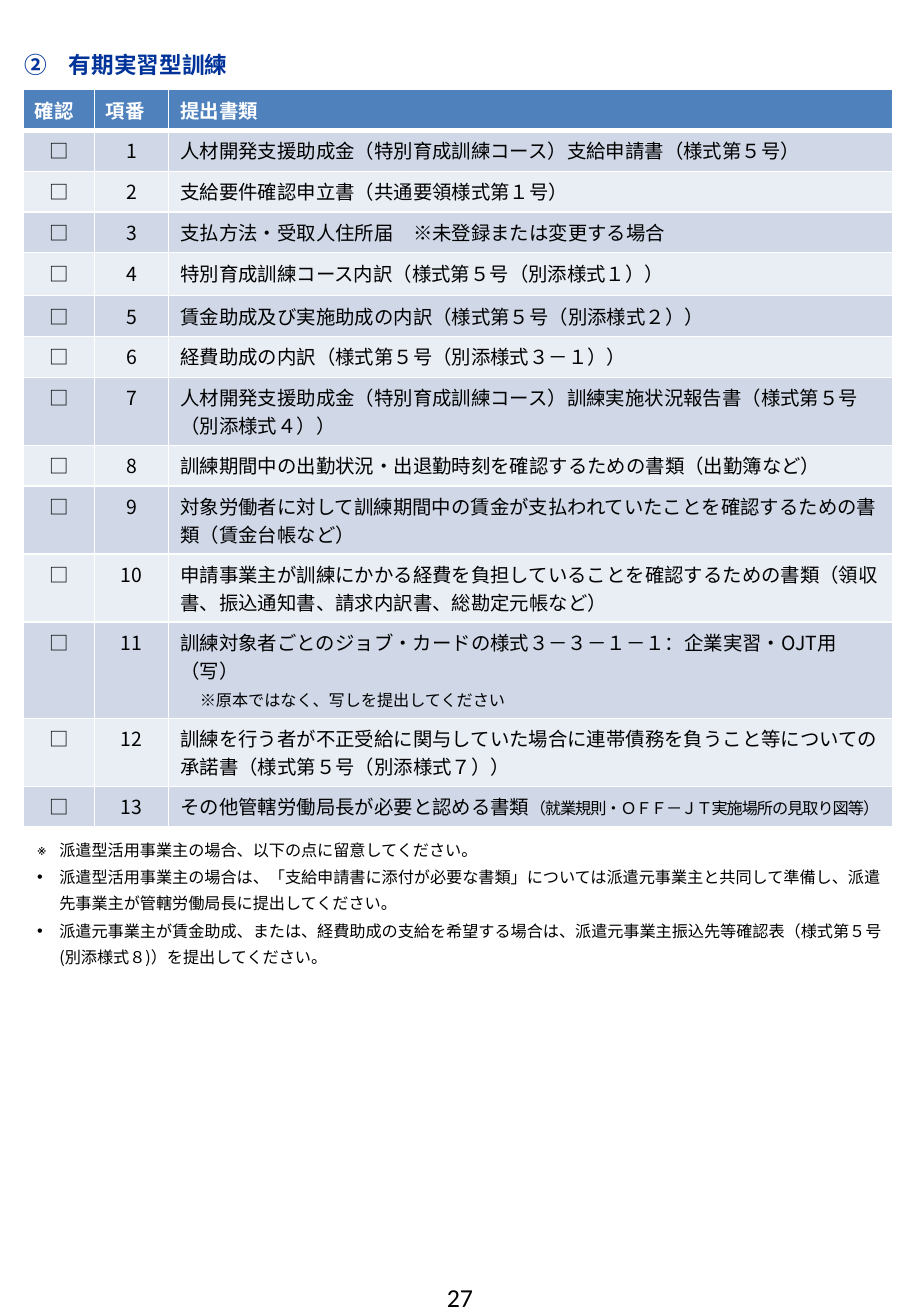
from lxml import etree
from pptx import Presentation
from pptx.dml.color import RGBColor
from pptx.enum.text import MSO_ANCHOR as Anchor, MSO_AUTO_SIZE as AutoSize, PP_ALIGN as Align
from pptx.oxml.ns import qn
from pptx.util import Inches, Pt

COLORS = {"heading": "003399", "header": "4F81BD", "odd": "D0D8E8",
          "even": "E9EDF4", "text": "000000", "white": "FFFFFF"}
JAPANESE = "Noto Sans CJK JP"


def write(para, text, size=12, color="text", bold=False, font=JAPANESE,
          align=Align.LEFT, spacing=None):
    para.alignment = align
    span = para.add_run()
    span.text = text
    span.font.size = Pt(size)
    span.font.bold = bold
    span.font.color.rgb = RGBColor.from_string(COLORS[color])
    span.font.name = font
    properties = span.font._element
    etree.SubElement(properties, qn("a:ea"), typeface=font)
    if spacing is not None:
        properties.set("spc", str(round(spacing * 100)))


def set_bullet(para, tag, indent, hanging, **attributes):
    properties = para._p.get_or_add_pPr()
    properties.set("marL", str(Inches(indent)))
    properties.set("indent", str(-Inches(hanging)))
    etree.SubElement(properties, qn(tag), **attributes)


deck = Presentation()
deck.slide_width, deck.slide_height = Inches(63 / 8), Inches(11.3)
page = deck.slides.add_slide(deck.slide_layouts[1])
title, notes = page.placeholders
number = page.shapes.add_textbox(0, 0, 0, 0)

frames = [
    (title, (0.1, 0.41, 7.61, 0.35), Anchor.TOP),
    (notes, (0.17, 7.11, 7.53, 1.22), Anchor.TOP),
    (number, (3.58, 10.89, 0.74, 0.49), Anchor.MIDDLE),
]
for box, place, anchor in frames:
    box.left, box.top, box.width, box.height = map(Inches, place)
    frame = box.text_frame
    frame.word_wrap = True
    frame.auto_size = AutoSize.NONE
    frame.vertical_anchor = anchor
    frame.margin_left = frame.margin_right = Inches(0.11)
    frame.margin_top = frame.margin_bottom = Inches(0.05)

heading = title.text_frame.paragraphs[0]
write(heading, "有期実習型訓練", size=14, color="heading", bold=True)
heading.line_spacing = Pt(15)
set_bullet(heading, "a:buAutoNum", 0.38, 0.38, type="circleNumDbPlain", startAt="2")

documents = [
    ("人材開発支援助成金（特別育成訓練コース）支給申請書（様式第５号）", 0.35),
    ("支給要件確認申立書（共通要領様式第１号）", 0.35),
    ("支払方法・受取人住所届　※未登録または変更する場合", 0.35),
    ("特別育成訓練コース内訳（様式第５号（別添様式１））", 0.37),
    ("賃金助成及び実施助成の内訳（様式第５号（別添様式２））", 0.35),
    ("経費助成の内訳（様式第５号（別添様式３－１））", 0.35),
    ("人材開発支援助成金（特別育成訓練コース）訓練実施状況報告書（様式第５号（別添様式４））", 0.58),
    ("訓練期間中の出勤状況・出退勤時刻を確認するための書類（出勤簿など）", 0.35),
    ("対象労働者に対して訓練期間中の賃金が支払われていたことを確認するための書類（賃金台帳など）", 0.58),
    ("申請事業主が訓練にかかる経費を負担していることを確認するための書類（領収書、振込通知書、請求内訳書、総勘定元帳など）", 0.58),
    ("訓練対象者ごとのジョブ・カードの様式３－３－１－１：企業実習・OJT用（写）　", 0.82),
    ("訓練を行う者が不正受給に関与していた場合に連帯債務を負うこと等についての承諾書（様式第５号（別添様式７））", 0.58),
    ("その他管轄労働局長が必要と認める書類", 0.35),
]
heights = [0.35] + [height for _, height in documents]
widths = [0.61, 0.64, 6.22]
table = page.shapes.add_table(
    len(heights), len(widths), Inches(0.2), Inches(0.77),
    Inches(sum(widths)), Inches(sum(heights))).table
for column, width in zip(table.columns, widths):
    column.width = Inches(width)

rows = [("確認", "項番", "提出書類")]
rows += [("□", str(index), name) for index, (name, _) in enumerate(documents, 1)]
for index, texts in enumerate(rows):
    table.rows[index].height = Inches(heights[index])
    is_header = index == 0
    fill = "header" if is_header else "odd" if index % 2 else "even"
    for column, text in enumerate(texts):
        cell = table.cell(index, column)
        properties = cell._tc.get_or_add_tcPr()
        for side in ("L", "R", "T", "B"):
            is_thick = (is_header and side == "B") or (index == 1 and side == "T")
            line = etree.SubElement(properties, qn(f"a:ln{side}"), w=str(Pt(3 if is_thick else 1)))
            paint = etree.SubElement(line, qn("a:solidFill"))
            etree.SubElement(paint, qn("a:srgbClr"), val=COLORS["white"])
        cell.fill.solid()
        cell.fill.fore_color.rgb = RGBColor.from_string(COLORS[fill])
        write(cell.text_frame.paragraphs[0], text, bold=is_header,
              color="white" if is_header else "text",
              align=Align.LEFT if is_header or column == 2 else Align.CENTER)

copy_note = table.cell(11, 2).text_frame.add_paragraph()
write(copy_note, "　")
write(copy_note, "※原本ではなく、写しを提出してください", size=10)
write(table.cell(13, 2).text_frame.paragraphs[0],
      "（就業規則・ＯＦＦ－ＪＴ実施場所の見取り図等）", size=10, spacing=-0.6)

remarks = [
    ("※", "派遣型活用事業主の場合、以下の点に留意してください。"),
    ("•", "派遣型活用事業主の場合は、「支給申請書に添付が必要な書類」については派遣元事業主と共同して準備し、派遣先事業主が管轄労働局長に提出してください。"),
    ("•", "派遣元事業主が賃金助成、または、経費助成の支給を希望する場合は、派遣元事業主振込先等確認表（様式第５号(別添様式８)）を提出してください。"),
]
for index, (mark, text) in enumerate(remarks):
    frame = notes.text_frame
    para = frame.add_paragraph() if index else frame.paragraphs[0]
    write(para, text, size=10)
    para.line_spacing = Pt(16)
    para.space_before = Pt(1)
    set_bullet(para, "a:buChar", 0.23, 0.19, char=mark)

write(number.text_frame.paragraphs[0], "27", size=16, font="Calibri", align=Align.CENTER)

deck.save("out.pptx")
